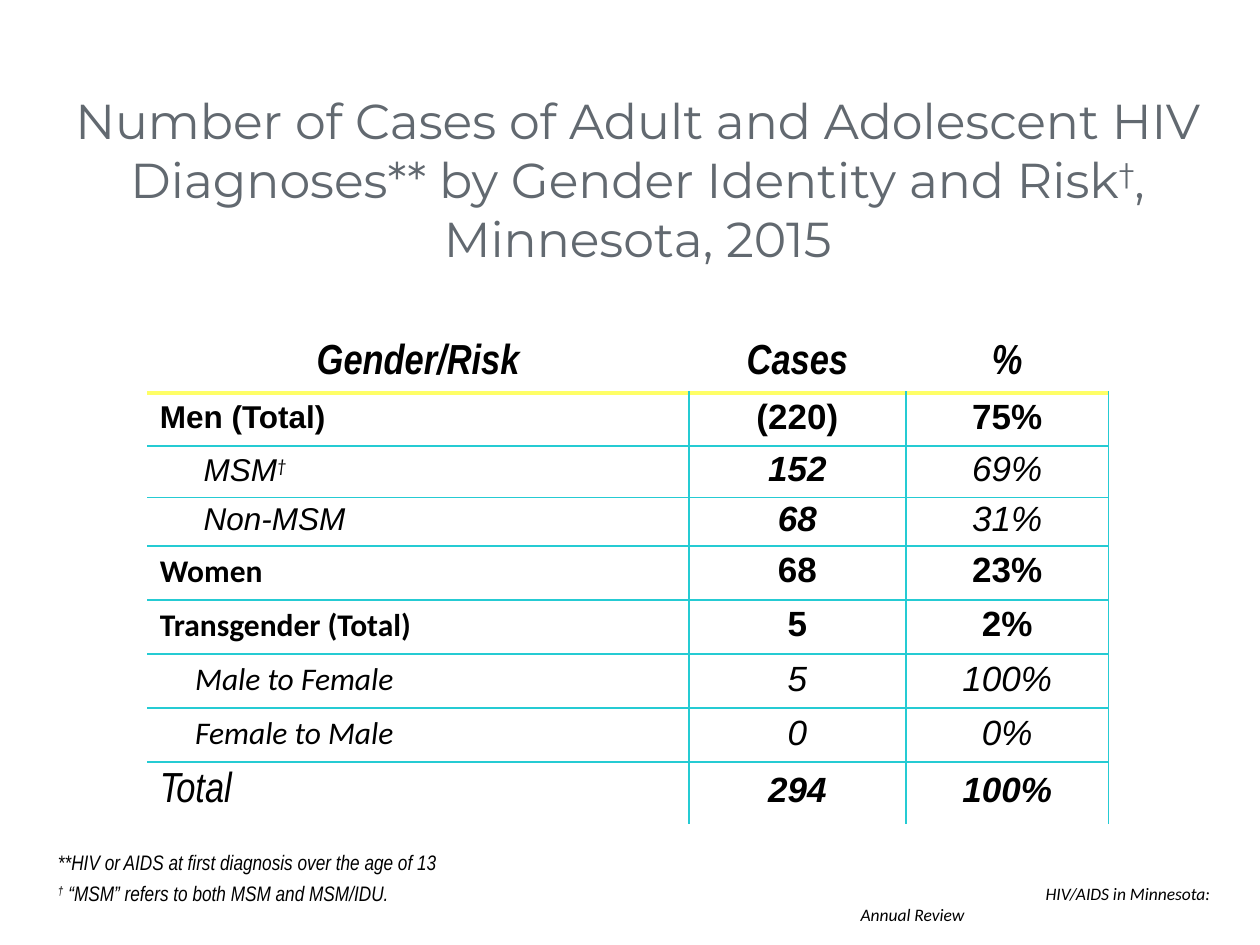
from dataclasses import dataclass

from pptx import Presentation
from pptx import util as u
from pptx.dml.color import RGBColor
from pptx.enum import text
from pptx.oxml import ns
from lxml import etree


@dataclass(frozen=True)
class Theme:
    title_color: str = "626970"
    ink: str = "000000"
    rule: str = "25CBD3"
    header_rule: str = "FFFF66"
    title: int = 28
    heading: int = 24
    figure: int = 20
    label: int = 18
    note: int = 12
    footer: int = 10


THEME = Theme()
LEFT, CENTER = text.PP_ALIGN.LEFT, text.PP_ALIGN.CENTER
COLUMNS = [10.92, 4.37, 4.09]
ROW_HEIGHTS = [1.14, 1.07, 1.04, 0.97, 1.09, 1.09, 1.09, 1.09, 1.24]
HEADINGS = ["Gender/Risk", "Cases", "%"]

# label, font, indent, cases, percent, styles of the three cells
ROWS = [
    ("Men (Total)", "Arial", 0, "(220)", "75%", ("b", "b", "b")),
    ("MSM†", "Arial", 0.88, "152", "69%", ("i", "bi", "i")),
    ("Non-MSM", "Arial", 0.88, "68", "31%", ("i", "bi", "i")),
    ("Women", "Calibri", 0, "68", "23%", ("b", "b", "b")),
    ("Transgender (Total)", "Calibri", 0, "5", "2%", ("b", "b", "b")),
    ("Male to Female", "Calibri", 0.71, "5", "100%", ("i", "i", "i")),
    ("Female to Male", "Calibri", 0.71, "0", "0%", ("i", "i", "i")),
    ("Total", "Arial Narrow", 0, "294", "100%", ("i", "bi", "bi")),
]


def set_font(font, name, size, color=THEME.ink, style=""):
    font.name = name
    font.size = u.Pt(size)
    font.color.rgb = RGBColor.from_string(color)
    font.bold = "b" in style
    font.italic = "i" in style


def write(para, words, name, size, color=THEME.ink, style="", dagger_font=None):
    set_font(para.font, name, size, color, style)
    before, dagger, after = words.partition("†")
    for part in filter(None, (before, dagger, after)):
        span = para.add_run()
        span.text = part
        if part == "†":
            span.font._element.set("baseline", "30000")
            if dagger_font:
                span.font.name = dagger_font


def add_text(page, left, top, width, height, margins):
    frame = page.shapes.add_textbox(
        u.Cm(left), u.Cm(top), u.Cm(width), u.Cm(height)).text_frame
    frame.word_wrap = True
    (frame.margin_left, frame.margin_top,
     frame.margin_right, frame.margin_bottom) = [u.Cm(m) for m in margins]
    return frame


def set_borders(cell, borders):
    properties = cell._tc.get_or_add_tcPr()
    for side in "LRTB":
        color, width = borders.get(side, (None, 0))
        line = etree.SubElement(properties, ns.qn(f"a:ln{side}"), w=str(u.Pt(width)))
        if color:
            fill = etree.SubElement(line, ns.qn("a:solidFill"))
            etree.SubElement(fill, ns.qn("a:srgbClr"), val=color)
        else:
            etree.SubElement(line, ns.qn("a:noFill"))


def cell_borders(row, column):
    header, rule = (THEME.header_rule, 2.25), (THEME.rule, 1)
    if row == 0:
        return {"B": header}
    borders = {"T": header if row == 1 else rule, "R": rule}
    if column > 0:
        borders["L"] = rule
    if row < len(ROWS):
        borders["B"] = rule
    return borders


def fill_cell(table, row, column, words, name, size, style, align, indent=0):
    cell = table.cell(row, column)
    cell.vertical_anchor = text.MSO_ANCHOR.MIDDLE
    set_borders(cell, cell_borders(row, column))
    cell.fill.background()
    para = cell.text_frame.paragraphs[0]
    para.alignment = align
    para.line_spacing = 0.85
    if indent:
        para._p.get_or_add_pPr().set("marL", str(u.Cm(indent)))
    write(para, words, name, size, style=style, dagger_font="Calibri")


def add_case_table(page):
    table = page.shapes.add_table(
        len(ROW_HEIGHTS), len(COLUMNS), u.Cm(2.97), u.Cm(6.78),
        u.Cm(sum(COLUMNS)), u.Cm(sum(ROW_HEIGHTS))).table
    table.first_row = table.horz_banding = False
    for column, width in zip(table.columns, COLUMNS):
        column.width = u.Cm(width)
    for row, height in zip(table.rows, ROW_HEIGHTS):
        row.height = u.Cm(height)
    for column, words in enumerate(HEADINGS):
        fill_cell(table, 0, column, words, "Arial Narrow", THEME.heading, "bi", CENTER)
    for row, (label, name, indent, cases, percent, styles) in enumerate(ROWS, 1):
        size = THEME.heading if label == "Total" else THEME.label
        fill_cell(table, row, 0, label, name, size, styles[0], LEFT, indent)
        for column, words in enumerate((cases, percent), 1):
            fill_cell(table, row, column, words, "Arial", THEME.figure,
                      styles[column], CENTER)


def add_title(page):
    para = add_text(page, 0.84, 1.7, 24.03, 3.84, (0.25, 0.13, 0.25, 0.13)).paragraphs[0]
    para.alignment = CENTER
    write(para, "Number of Cases of Adult and Adolescent HIV Diagnoses** by Gender "
          "Identity and Risk†, Minnesota, 2015",
          "Montserrat", THEME.title, THEME.title_color)


def add_notes(page):
    frame = add_text(page, 0.66, 16.64, 9, 2.16, (0.51,) * 4)
    frame.vertical_anchor = text.MSO_ANCHOR.MIDDLE
    first, second = frame.paragraphs[0], frame.add_paragraph()
    first.line_spacing, second.line_spacing = 0.9, 0.8
    second.space_before = u.Pt(6)
    write(first, "**HIV or AIDS at first diagnosis over the age of 13",
          "Arial Narrow", THEME.note, style="i")
    write(second, "† “MSM” refers to both MSM and MSM/IDU.",
          "Arial Narrow", THEME.note, style="i")


def add_footer(page):
    para = add_text(page, 17.35, 16.74, 8.05, 2.31, (0, 1.26, 0.76, 0)).paragraphs[0]
    para._p.get_or_add_pPr().set("indent", str(u.Cm(3.73)))
    write(para, "HIV/AIDS in Minnesota: Annual Review", "Calibri", THEME.footer, style="i")


def main():
    deck = Presentation()
    deck.slide_width, deck.slide_height = u.Cm(25.4), u.Cm(19.05)
    page = deck.slides.add_slide(deck.slide_layouts[6])
    add_title(page)
    add_case_table(page)
    add_notes(page)
    add_footer(page)
    deck.save("out.pptx")


if __name__ == "__main__":
    main()
